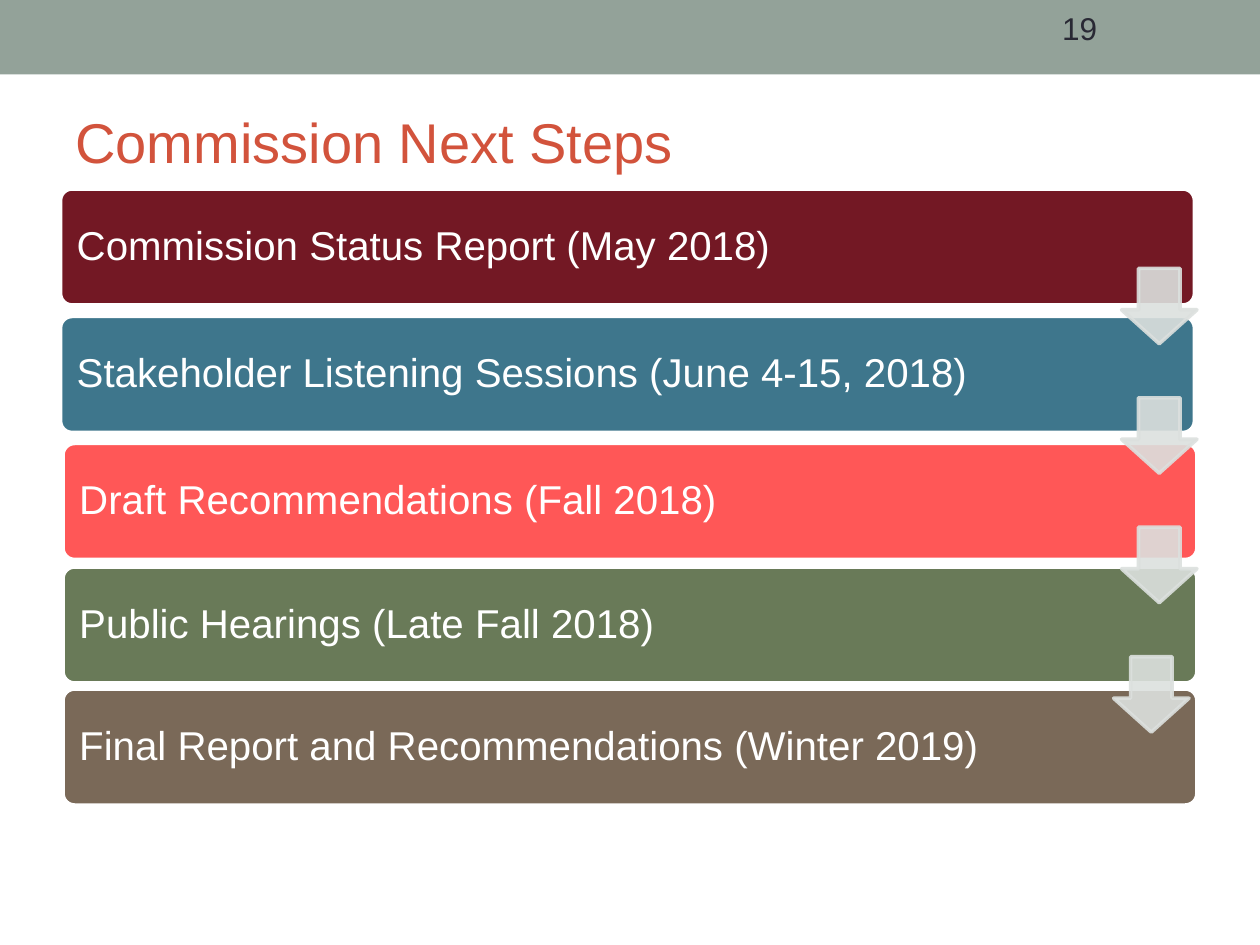
"""Build the Commission Next Steps slide: five stacked bars linked by arrows."""
from lxml import etree
from pptx import Presentation
from pptx.dml.color import RGBColor
from pptx.enum.shapes import MSO_SHAPE as Shape
from pptx.enum.text import MSO_ANCHOR as Anchor, PP_ALIGN as Align
from pptx.oxml.ns import qn
from pptx.util import Cm, Pt

TITLE = "Commission Next Steps"
PAGE_NUMBER = "19"
STEPS = [
    ("Commission Status Report (May 2018)", "731824", 1.22, 3.81),
    ("Stakeholder Listening Sessions (June 4-15, 2018)", "3E768C", 1.22, 6.38),
    ("Draft Recommendations (Fall 2018)", "FF5757", 1.27, 8.94),
    ("Public Hearings (Late Fall 2018)", "697A58", 1.27, 11.43),
    ("Final Report and Recommendations (Winter 2019)", "7A6958", 1.27, 13.89),
]
ARROW_LEFTS = [22.61, 22.61, 22.61, 22.45]
ARROW_TOP, ARROW_PITCH, ARROW_SIZE = 5.41, 2.61, 1.52
BAR_WIDTH, BAR_HEIGHT = 22.86, 2.34
WHITE, ARROW_COLOR = "FFFFFF", "DCE0DE"


def paint(color_format, color):
    color_format.rgb = RGBColor.from_string(color)


def write(shape, text, size, color, anchor=Anchor.MIDDLE, inset=0.25, spacing=1.0):
    frame = shape.text_frame
    frame.word_wrap = True
    frame.vertical_anchor = anchor
    frame.margin_left = Cm(inset)
    paragraph = frame.paragraphs[0]
    paragraph.alignment = Align.LEFT
    paragraph.line_spacing = spacing
    run = paragraph.add_run()
    run.text = text
    run.font.name = "Arial"
    run.font.size = Pt(size)
    paint(run.font.color, color)


def add_box(slide, box, text, size, color, **formatting):
    write(slide.shapes.add_textbox(*map(Cm, box)), text, size, color, **formatting)


def add_shape(slide, kind, box, fill, line=None, adjustments=(), opacity=100):
    shape = slide.shapes.add_shape(kind, *map(Cm, box))
    shape.shadow.inherit = False
    for index, value in enumerate(adjustments):
        shape.adjustments[index] = value
    shape.fill.solid()
    paint(shape.fill.fore_color, fill)
    if line:
        paint(shape.line.color, line)
        shape.line.width = Pt(2.08)
    else:
        shape.line.fill.background()
    if opacity < 100:
        for color in shape.element.spPr.iter(qn("a:srgbClr")):
            etree.SubElement(color, qn("a:alpha"), val=str(opacity * 1000))
    return shape


def main():
    presentation = Presentation()
    presentation.slide_width, presentation.slide_height = Cm(25.4), Cm(19.05)
    slide = presentation.slides.add_slide(presentation.slide_layouts[6])

    add_shape(slide, Shape.RECTANGLE, (0, 0, 25.4, 1.5), "93A299")
    add_box(slide, (1.27, 1.47, 22.86, 2.74), TITLE, 32, "D2533C")

    for text, color, left, top in STEPS:
        bar = add_shape(slide, Shape.ROUNDED_RECTANGLE, (left, top, BAR_WIDTH, BAR_HEIGHT),
                        color, line=WHITE, adjustments=[0.1])
        write(bar, text, 23, WHITE, inset=0.26, spacing=0.9)

    for index, left in enumerate(ARROW_LEFTS):
        top = ARROW_TOP + index * ARROW_PITCH
        add_shape(slide, Shape.DOWN_ARROW, (left, top, ARROW_SIZE, ARROW_SIZE), ARROW_COLOR,
                  line=ARROW_COLOR, adjustments=[0.55, 0.45], opacity=90)

    add_box(slide, (21.16, 0.05, 2.97, 0.91), PAGE_NUMBER, 18, "292934", anchor=Anchor.TOP)
    presentation.save("out.pptx")


if __name__ == "__main__":
    main()
